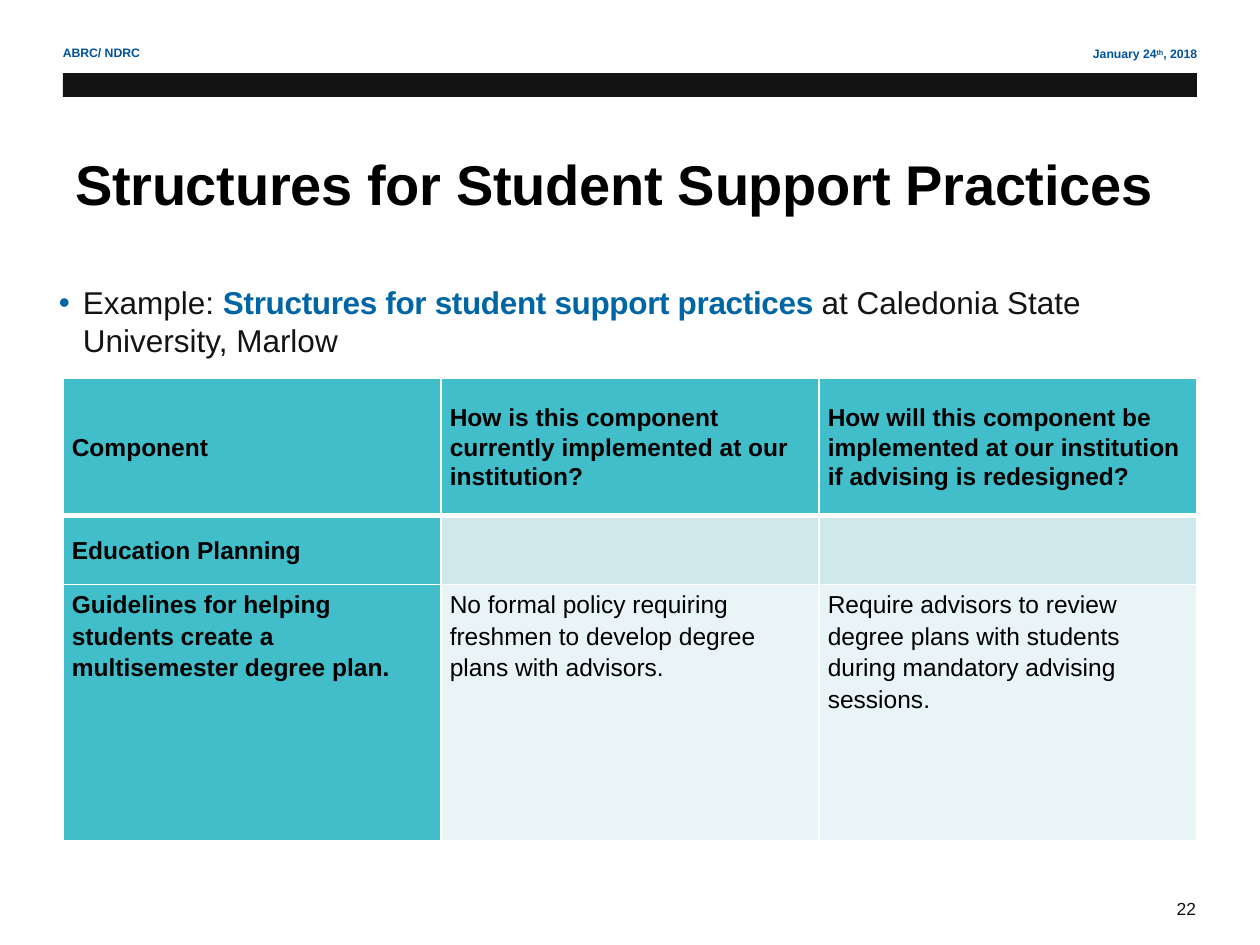
from dataclasses import dataclass
from typing import Any

from lxml.etree import SubElement
from pptx import Presentation
from pptx.dml.color import RGBColor
from pptx.enum.shapes import MSO_SHAPE
from pptx.enum.text import MSO_ANCHOR, PP_ALIGN
from pptx.oxml.ns import qn
from pptx.util import Inches, Pt

BLACK = RGBColor(0x00, 0x00, 0x00)
INK = RGBColor(0x14, 0x13, 0x13)
NAVY = RGBColor(0x00, 0x53, 0x9B)
BLUE = RGBColor(0x00, 0x65, 0xA4)
TEAL = RGBColor(0x42, 0xBE, 0xCA)
PALE = RGBColor(0xCF, 0xE8, 0xEC)
PALER = RGBColor(0xE9, 0xF4, 0xF6)
WHITE = RGBColor(0xFF, 0xFF, 0xFF)


@dataclass(frozen=True)
class Run:
    text: str
    size: float
    color: RGBColor
    bold: bool = False
    spacing: int = 0
    baseline: int = 0


@dataclass(frozen=True)
class Label:
    box: tuple[float, float, float, float]
    runs: tuple[Run, ...]
    paragraph: dict[str, Any]
    anchor: MSO_ANCHOR = MSO_ANCHOR.TOP
    bullet: bool = False


@dataclass(frozen=True)
class Row:
    height: float
    texts: tuple[str, str, str]
    fill: RGBColor
    bold: bool
    anchor: MSO_ANCHOR
    spacing: float
    margin: float
    bottom: float = 1


LABELS = (
    Label((6.42, 0.32, 3.18, 0.22),
          (Run("January 24", 7, NAVY, True),
           Run("th", 7, NAVY, True, baseline=30000),
           Run(", 2018", 7, NAVY, True)),
          {"alignment": PP_ALIGN.RIGHT, "space_before": Pt(2.3)}),
    Label((9.24, 7.08, 0.46, 0.27), (Run("22", 10, INK),),
          {"space_before": Pt(5)}),
    Label((0.4, 0.31, 3.56, 0.22), (Run("ABRC/ NDRC", 7, NAVY, True),),
          {"space_before": Pt(2.3)}),
    Label((0.37, 2.2, 9, 0.69),
          (Run("Example: ", 18, INK),
           Run("Structures for student support practices ", 18, BLUE, True, -20),
           Run("at Caledonia State University, Marlow", 18, INK)),
          {"space_before": Pt(3.6)}, bullet=True),
    Label((0.37, 0.83, 9, 1.25),
          (Run("Structures for Student Support Practices", 32, BLACK, True, -20),),
          {"alignment": PP_ALIGN.CENTER}, MSO_ANCHOR.MIDDLE),
)

ROWS = (
    Row(1.09,
        ("Component",
         "How is this component currently implemented at our institution?",
         "How will this component be implemented at our institution "
         "if advising is redesigned?"),
        TEAL, True, MSO_ANCHOR.MIDDLE, 1.07, 0.04, 3),
    Row(0.55, ("Education Planning", "", ""),
        PALE, False, MSO_ANCHOR.MIDDLE, 1.07, 0.02),
    Row(2.03,
        ("Guidelines for helping students create a multisemester degree plan.",
         "No formal policy requiring freshmen to develop degree plans with advisors.",
         "Require advisors to review degree plans with students during "
         "mandatory advising sessions."),
        PALER, False, MSO_ANCHOR.TOP, 1.15, 0.02),
)


def set_all(target: Any, values: dict[str, Any]) -> None:
    for name, value in values.items():
        setattr(target, name, value)


def add_run(p: Any, run: Run) -> None:
    r = p.add_run()
    r.text = run.text
    set_all(r.font, {"name": "Arial", "size": Pt(run.size), "bold": run.bold})
    r.font.color.rgb = run.color
    for key, value in (("spc", run.spacing), ("baseline", run.baseline)):
        if value:
            r.font._element.set(key, str(value))


def add_bullet(p: Any, color: RGBColor) -> None:
    pPr = p._p.get_or_add_pPr()
    indent = Inches(0.19)
    pPr.set("marL", str(indent))
    pPr.set("indent", str(-indent))
    bu_color = SubElement(pPr, qn("a:buClr"))
    SubElement(bu_color, qn("a:srgbClr"), val=str(color))
    SubElement(pPr, qn("a:buFont"), typeface="Arial")
    SubElement(pPr, qn("a:buChar"), char="•")


def add_label(s: Any, label: Label) -> None:
    tf = s.shapes.add_textbox(*map(Inches, label.box)).text_frame
    set_all(tf, {"word_wrap": True, "vertical_anchor": label.anchor})
    p = tf.paragraphs[0]
    set_all(p, label.paragraph)
    if label.bullet:
        add_bullet(p, BLUE)
    for run in label.runs:
        add_run(p, run)


def add_bar(s: Any) -> None:
    sp = s.shapes.add_shape(MSO_SHAPE.RECTANGLE, Inches(0.5), Inches(0.58),
                            Inches(9), Inches(0.19))
    sp.shadow.inherit = False
    sp.fill.solid()
    sp.fill.fore_color.rgb = INK
    sp.line.fill.background()


def add_borders(cell: Any, widths: dict[str, float]) -> None:
    tcPr = cell._tc.get_or_add_tcPr()
    for index, (side, width) in enumerate(widths.items()):
        ln = SubElement(tcPr, qn(f"a:{side}"), w=str(Pt(width)))
        fill = SubElement(ln, qn("a:solidFill"))
        SubElement(fill, qn("a:srgbClr"), val=str(WHITE))
        tcPr.insert(index, ln)


def add_grid(s: Any, rows: tuple[Row, ...]) -> None:
    height = sum(row.height for row in rows)
    table = s.shapes.add_table(len(rows), 3, Inches(0.5), Inches(3),
                               Inches(9), Inches(height)).table
    top = 1
    for i, row in enumerate(rows):
        table.rows[i].height = Inches(row.height)
        for j, text in enumerate(row.texts):
            cell = table.cell(i, j)
            set_all(cell, {"vertical_anchor": row.anchor,
                           "margin_left": Inches(0.07),
                           "margin_right": Inches(0.07),
                           "margin_top": Inches(row.margin),
                           "margin_bottom": Inches(row.margin)})
            cell.fill.solid()
            cell.fill.fore_color.rgb = TEAL if j == 0 else row.fill
            add_borders(cell, {"lnL": 1, "lnR": 1, "lnT": top, "lnB": row.bottom})
            p = cell.text_frame.paragraphs[0]
            p.line_spacing = row.spacing
            if text:
                add_run(p, Run(text, 14, BLACK, row.bold or j == 0))
        top = row.bottom


def main() -> None:
    prs = Presentation()
    set_all(prs, {"slide_width": Inches(10), "slide_height": Inches(7.5)})
    s = prs.slides.add_slide(prs.slide_layouts[6])
    add_bar(s)
    for label in LABELS:
        add_label(s, label)
    add_grid(s, ROWS)
    prs.save("out.pptx")


if __name__ == "__main__":
    main()
